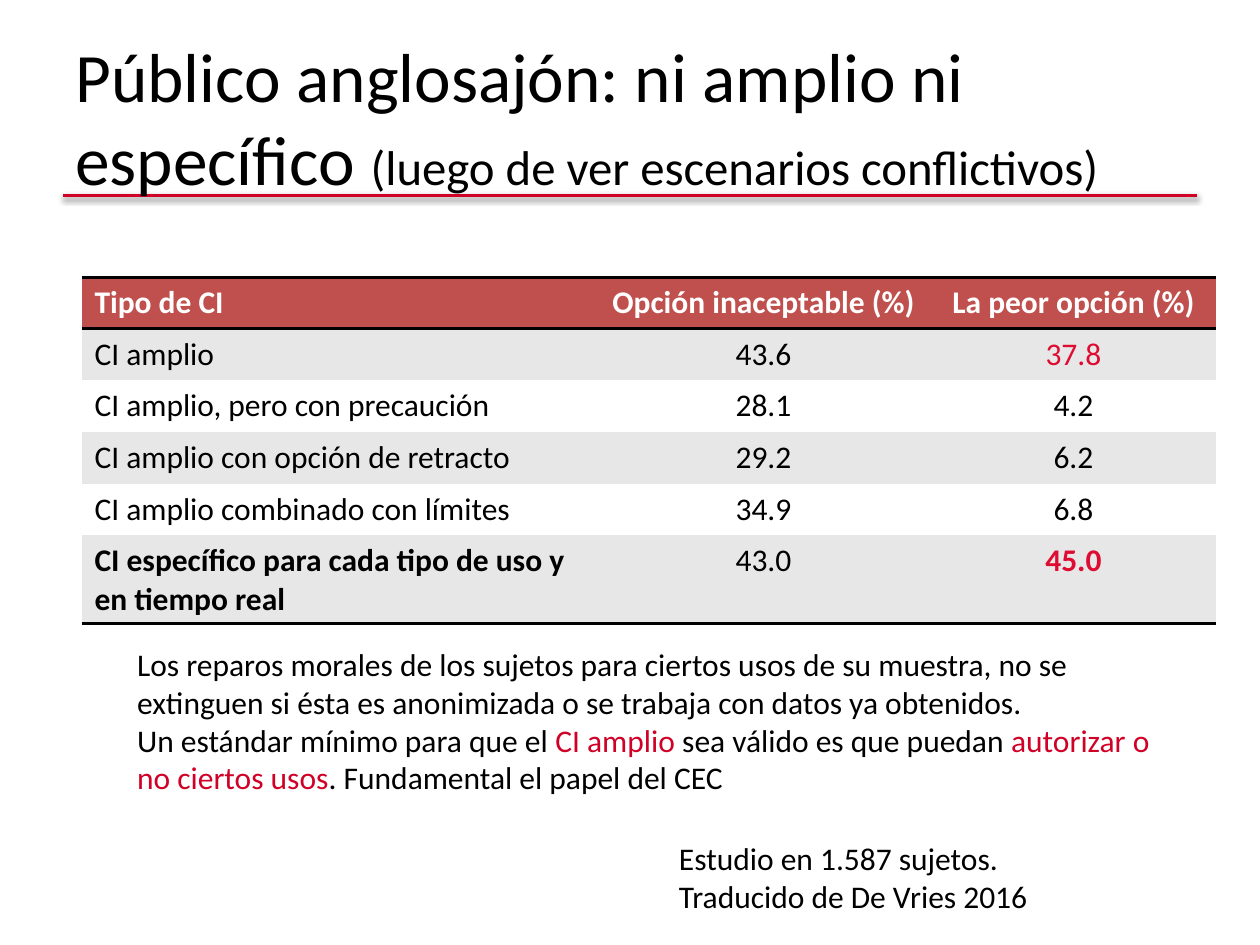
from lxml.etree import SubElement, fromstring
from pptx import Presentation
from pptx.dml.color import RGBColor as RGB
from pptx.enum.shapes import MSO_CONNECTOR as Conn
from pptx.enum.text import MSO_ANCHOR as Anchor, PP_ALIGN as Align
from pptx.oxml.ns import nsdecls, qn
from pptx.util import Inches, Pt

THEME = dict(
    font="Calibri", text="000000", white="FFFFFF", accent="D00026", alert="DF0C32",
    header="C0504D", band="E7E7E7", title=39.6, subtitle=27.9, body=18, rule=2,
)

TITLE = [[("Público anglosajón: ni amplio ni específico ", dict(size="title")),
          ("(luego de ver escenarios conflictivos)", dict(size="subtitle"))]]
HEADER = ("Tipo de CI", "Opción inaceptable (%)", "La peor opción (%)")
ROWS = [
    ("CI amplio", "43.6", "37.8"),
    ("CI amplio, pero con precaución", "28.1", "4.2"),
    ("CI amplio con opción de retracto", "29.2", "6.2"),
    ("CI amplio combinado con límites", "34.9", "6.8"),
    ("CI específico para cada tipo de uso y en tiempo real", "43.0", "45.0"),
]
CELL_FORMATS = {
    (1, 2): dict(color="alert"),
    (5, 0): dict(bold=True),
    (5, 2): dict(color="alert", bold=True),
}
COL_WIDTHS = (4.08, 2.66, 2.26)
ROW_HEIGHT = 0.41
PLAIN_TABLE_STYLE = "{2D5ABB26-0587-4C30-8999-92F81FD0307C}"
RED = dict(color="accent")
SOURCE = [[("Estudio en 1.587 sujetos.", {})], [("Traducido de De Vries 2016", {})]]
COMMENT = [
    [("Los reparos morales de los sujetos para ciertos usos de su muestra, no se "
      "extinguen si ésta es anonimizada o se trabaja con datos ya obtenidos.", {})],
    [("Un estándar mínimo para que el ", {}), ("CI amplio ", RED),
     ("sea válido es que puedan ", {}), ("autorizar o no ciertos usos", RED),
     (". Fundamental el papel del CEC", {})],
]


def color_of(name):
    return RGB.from_string(THEME[name])


def add_run(p, text, size="body", color="text", bold=False):
    r = p.add_run()
    r.text = text
    r.font.name = THEME["font"]
    r.font.size = Pt(THEME[size])
    r.font.bold = bold
    r.font.color.rgb = color_of(color)


def add_text(slide, box, paragraphs, anchor=Anchor.TOP):
    tf = slide.shapes.add_textbox(*map(Inches, box)).text_frame
    tf.word_wrap = True
    tf.vertical_anchor = anchor
    for i, runs in enumerate(paragraphs):
        p = tf.add_paragraph() if i else tf.paragraphs[0]
        for text, fmt in runs:
            add_run(p, text, **fmt)


def add_title_rule(slide):
    line = slide.shapes.add_connector(
        Conn.STRAIGHT, Inches(0.5), Inches(1.55), Inches(9.5), Inches(1.55))
    line.line.color.rgb = color_of("accent")
    line.line.width = Pt(THEME["rule"])
    line._element.spPr.append(fromstring(
        f'<a:effectLst {nsdecls("a")}><a:outerShdw blurRad="{Pt(3.1)}" dist="{Pt(1.6)}" '
        'dir="5400000" rotWithShape="0"><a:srgbClr val="000000"><a:alpha val="38000"/>'
        '</a:srgbClr></a:outerShdw></a:effectLst>'))


def add_borders(cell, sides):
    """Draw black borders on the given sides, listed in the order T, B."""
    tc_pr = cell._tc.get_or_add_tcPr()
    for i, side in enumerate(sides):
        ln = SubElement(tc_pr, qn(f"a:ln{side}"), w=str(Pt(THEME["rule"])))
        fill = SubElement(ln, qn("a:solidFill"))
        SubElement(fill, qn("a:srgbClr"), val=THEME["text"])
        tc_pr.insert(i, ln)


def add_results_table(slide):
    data = [HEADER, *ROWS]
    frame = slide.shapes.add_table(
        len(data), len(HEADER), Inches(0.65), Inches(2.2),
        Inches(sum(COL_WIDTHS)), Inches(ROW_HEIGHT * len(data)))
    table = frame.table
    next(frame._element.iter(qn("a:tableStyleId"))).text = PLAIN_TABLE_STYLE
    for column, width in zip(table.columns, COL_WIDTHS):
        column.width = Inches(width)
    for i, values in enumerate(data):
        table.rows[i].height = Inches(ROW_HEIGHT)
        fill = "header" if i == 0 else "band" if i % 2 else "white"
        sides = "TB" if i == 0 else "B" if i == len(data) - 1 else ""
        for j, value in enumerate(values):
            cell = table.cell(i, j)
            cell.fill.solid()
            cell.fill.fore_color.rgb = color_of(fill)
            add_borders(cell, sides)
            p = cell.text_frame.paragraphs[0]
            p.alignment = Align.CENTER if j else Align.LEFT
            fmt = CELL_FORMATS.get((i, j), {}) if i else dict(color="white", bold=True)
            add_run(p, value, **fmt)


def main():
    prs = Presentation()
    prs.slide_width, prs.slide_height = Inches(10), Inches(7.5)
    slide = prs.slides.add_slide(prs.slide_layouts[6])
    add_title_rule(slide)
    add_text(slide, (0.5, 0.3, 9, 1.25), TITLE, anchor=Anchor.MIDDLE)
    add_results_table(slide)
    add_text(slide, (5.29, 6.61, 4.21, 0.71), SOURCE)
    add_text(slide, (0.99, 5.07, 8.24, 1.31), COMMENT)
    prs.save("out.pptx")


if __name__ == "__main__":
    main()
